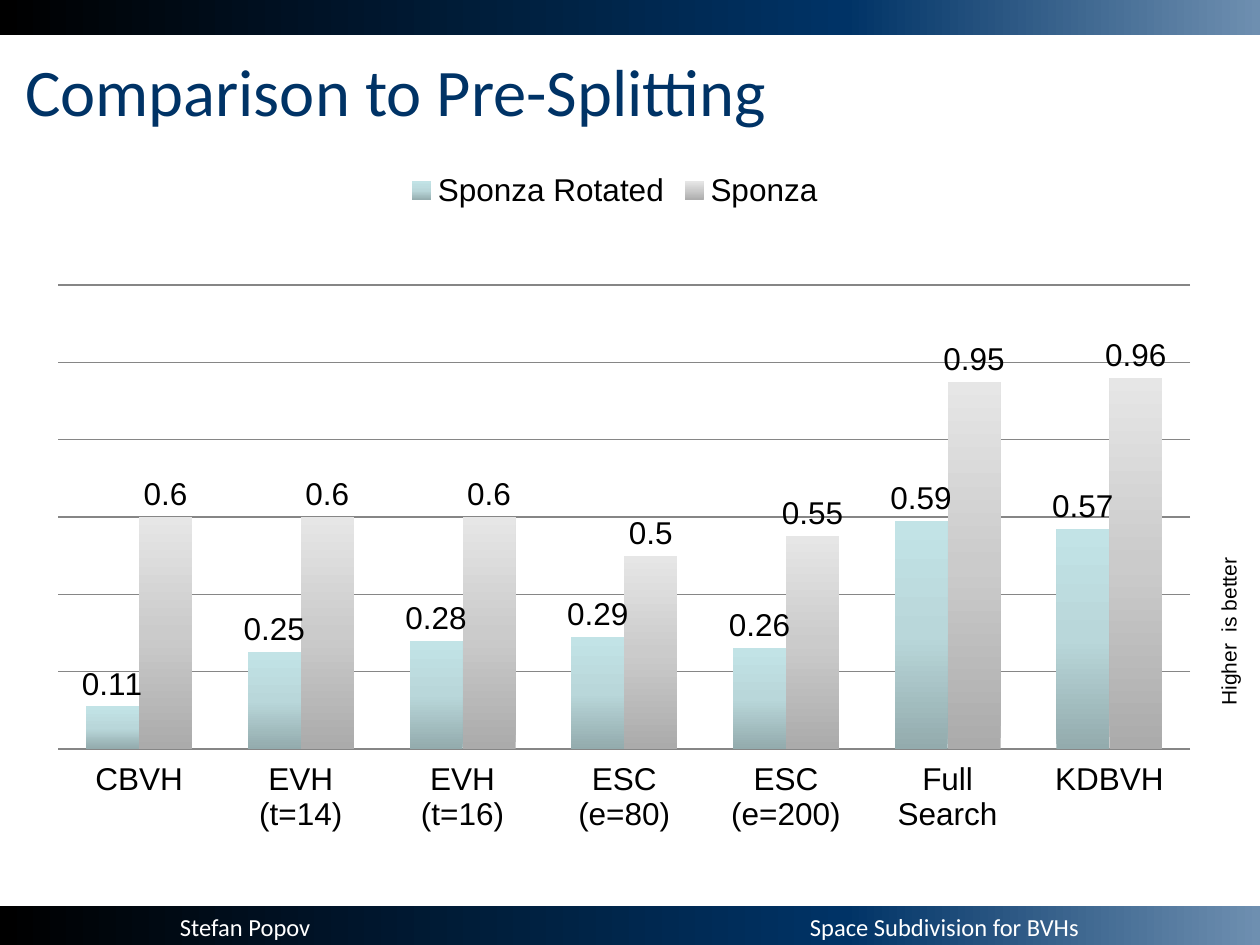
from copy import deepcopy
from lxml.etree import SubElement
from pptx import Presentation
from pptx.chart.data import CategoryChartData
from pptx.dml.color import RGBColor
from pptx.enum.chart import (XL_CHART_TYPE, XL_LABEL_POSITION, XL_LEGEND_POSITION,
                             XL_TICK_LABEL_POSITION, XL_TICK_MARK)
from pptx.enum.shapes import MSO_SHAPE
from pptx.enum.text import MSO_ANCHOR
from pptx.oxml.ns import qn
from pptx.util import Inches, Pt

WIDTH, HEIGHT = 10, 7.5
NAVY, BLACK, WHITE, GRID_GREY = "003366", "000000", "FFFFFF", "868686"
BAND_STOPS = [(0, BLACK), (0.67, NAVY), (1, "6E8FB0")]
CATEGORIES = ["CBVH", "EVH (t=14)", "EVH (t=16)", "ESC (e=80)", "ESC (e=200)",
              "Full Search", "KDBVH"]
SCENES = {
    "Sponza Rotated": ([0.11, 0.25, 0.28, 0.29, 0.26, 0.59, 0.57],
                       [(0, "93ABAD"), (0.5, "B9D7DA"), (1, "C2E3E6")]),
    "Sponza": ([0.6, 0.6, 0.6, 0.5, 0.55, 0.95, 0.96],
               [(0, "ABABAB"), (0.5, "CBCBCB"), (1, "E6E6E6")]),
}
PLOT_AREA = {"x": 0.025, "y": 0.177, "w": 0.966, "h": 0.644}


def color(code):
    return RGBColor.from_string(code)


def apply(target, values):
    for attribute, value in values.items():
        setattr(target, attribute, value)


def style_font(font, size, face, code):
    apply(font, {"size": Pt(size), "name": face})
    font.color.rgb = color(code)


def fill_gradient(fill, element, stops, angle):
    fill.gradient()
    fill.gradient_angle = angle
    stop_list = next(element.iter(qn("a:gsLst")))
    stop_list.append(deepcopy(stop_list[0]))
    for stop, (position, code) in zip(fill.gradient_stops, stops):
        stop.position = position
        stop.color.rgb = color(code)


def write(shape, text, size, face, code, **frame_format):
    frame = shape.text_frame
    apply(frame, frame_format)
    line = frame.paragraphs[0].add_run()
    line.text = text
    style_font(line.font, size, face, code)
    return frame


def add_band(slide, top, height):
    band = slide.shapes.add_shape(MSO_SHAPE.RECTANGLE, 0, Inches(top),
                                  Inches(WIDTH), Inches(height))
    band.shadow.inherit = False
    band.line.fill.background()
    fill_gradient(band.fill, band.element, BAND_STOPS, 0)
    return band


def add_footer(slide):
    footer = add_band(slide, 7.19, 0.33)
    frame = write(footer, "Stefan Popov\tSpace Subdivision for BVHs", 14, "Calibri", WHITE,
                  vertical_anchor=MSO_ANCHOR.MIDDLE, word_wrap=True,
                  margin_left=Inches(WIDTH / 7), margin_top=0, margin_bottom=0)
    properties = frame.paragraphs[0]._p.get_or_add_pPr()
    properties.set("algn", "l")
    stops = SubElement(properties, qn("a:tabLst"))
    SubElement(stops, qn("a:tab"), pos=str(Inches(WIDTH / 2)), algn="l")


def add_label(slide, box, text, size, face, code, **frame_format):
    label = slide.shapes.add_textbox(*map(Inches, box))
    return write(label, text, size, face, code, word_wrap=True, **frame_format)


def place_plot(chart):
    plot_area = chart._chartSpace.chart.plotArea
    for layout in plot_area.findall(qn("c:layout")):
        plot_area.remove(layout)
    layout = SubElement(plot_area, qn("c:layout"))
    plot_area.insert(0, layout)
    manual = SubElement(layout, qn("c:manualLayout"))
    settings = {"layoutTarget": "inner", "xMode": "edge", "yMode": "edge", **PLOT_AREA}
    for tag, value in settings.items():
        SubElement(manual, qn(f"c:{tag}"), val=str(value))


def style_axes(chart):
    values, categories = chart.value_axis, chart.category_axis
    apply(values, {"minimum_scale": 0, "maximum_scale": 1.2, "major_unit": 0.2,
                   "has_major_gridlines": True, "visible": False})
    apply(categories, {"major_tick_mark": XL_TICK_MARK.NONE,
                       "minor_tick_mark": XL_TICK_MARK.NONE,
                       "tick_label_position": XL_TICK_LABEL_POSITION.LOW})
    for rule in (values.major_gridlines.format.line, categories.format.line):
        rule.color.rgb = color(GRID_GREY)
        rule.width = Pt(0.75)


def add_comparison(slide):
    data = CategoryChartData(number_format="General")
    data.categories = CATEGORIES
    for scene, (speeds, _) in SCENES.items():
        data.add_series(scene, speeds)
    chart = slide.shapes.add_chart(XL_CHART_TYPE.COLUMN_CLUSTERED,
                                   *map(Inches, (0.23, 1.25, 9.3, 5.72)), data).chart
    style_font(chart.font, 18, "Arial", BLACK)
    apply(chart, {"has_title": False, "has_legend": True})
    apply(chart.legend, {"position": XL_LEGEND_POSITION.TOP, "include_in_layout": False})
    style_axes(chart)
    place_plot(chart)
    columns = chart.plots[0]
    apply(columns, {"gap_width": 105, "overlap": 0, "vary_by_categories": False})
    for series, (_, stops) in zip(columns.series, SCENES.values()):
        fill_gradient(series.format.fill, series._element, stops, 90)
        series.invert_if_negative = False
        apply(series.data_labels, {"show_value": True,
                                   "position": XL_LABEL_POSITION.OUTSIDE_END})


def main():
    deck = Presentation()
    apply(deck, {"slide_width": Inches(WIDTH), "slide_height": Inches(HEIGHT)})
    slide = deck.slides.add_slide(deck.slide_layouts[6])
    add_band(slide, 0, 0.28)
    add_footer(slide)
    add_label(slide, (0, 0.36, WIDTH, 0.71), "Comparison to Pre-Splitting", 38, "Calibri",
              NAVY, vertical_anchor=MSO_ANCHOR.MIDDLE, margin_left=Inches(0.2))
    add_comparison(slide)
    reading_hint = add_label(slide, (9.6, 4.14, 0.4, 1.56), "Higher  is better", 12,
                             "Arial", BLACK)
    reading_hint._txBody.bodyPr.set("vert", "vert270")
    deck.save("out.pptx")


if __name__ == "__main__":
    main()
